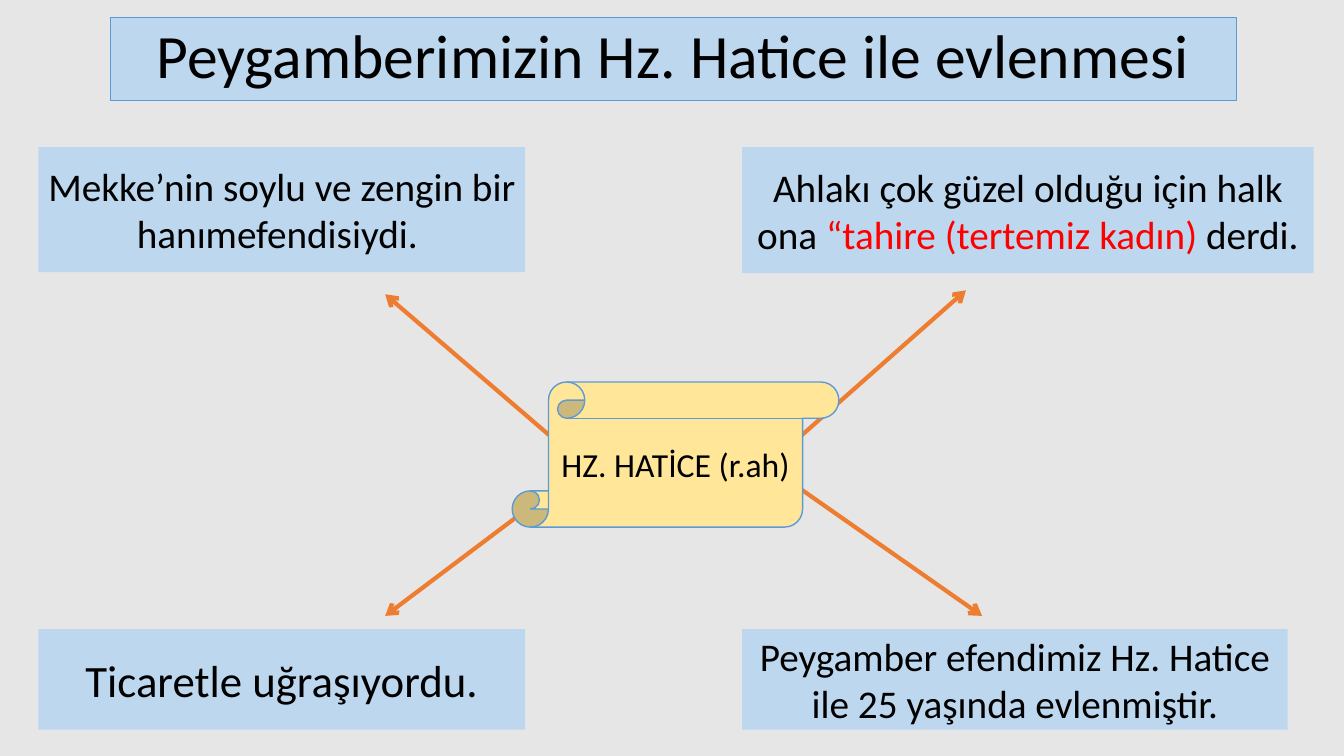
from lxml import etree
from pptx import Presentation
from pptx.dml.color import RGBColor
from pptx.enum.shapes import MSO_CONNECTOR, MSO_SHAPE
from pptx.enum.text import MSO_ANCHOR, PP_ALIGN
from pptx.oxml.ns import qn
from pptx.util import Inches, Pt

RECT, SCROLL = MSO_SHAPE.RECTANGLE, MSO_SHAPE.VERTICAL_SCROLL
LINE = MSO_CONNECTOR.STRAIGHT
MIDDLE, CENTER = MSO_ANCHOR.MIDDLE, PP_ALIGN.CENTER

WIDE, HIGH = Inches(13.33), Inches(7.5)
COLORS = {"back": "E7E6E6", "box": "BDD7EE", "edge": "5B9BD5", "arrow": "ED7D31",
          "scroll": "FFE699", "text": "000000", "accent": "FF0000"}
FRAME = {"word_wrap": True, "vertical_anchor": MIDDLE}

# All places are percent of the slide's width and height
LEFT, RIGHT = 2.85, 55.21
TOP, BOTTOM = 19.47, 83.2
HUB_LEFT, HUB_RIGHT, HUB_Y = 43.51, 57.09, 61.6
LOW_TIP = 81.47

FACTS = [
    ((LEFT, TOP, 36.23, 16.53), 28,
     [("Mekke’nin soylu ve zengin bir hanımefendisiydi. ", "text")]),
    ((RIGHT, TOP, 42.54, 16.67), 28,
     [("Ahlakı çok güzel olduğu için halk ona ", "text"),
      ("“tahire (tertemiz kadın) ", "accent"), ("derdi.", "text")]),
    ((LEFT, BOTTOM, 36.23, 13.33), 32, [("Ticaretle uğraşıyordu.", "text")]),
    ((RIGHT, BOTTOM, 40.59, 13.33), 28,
     [("Peygamber efendimiz Hz. Hatice ile 25 yaşında evlenmiştir.", "text")]),
]
ARROWS = [(HUB_LEFT, 28.66, 38.93), (HUB_LEFT, 28.66, LOW_TIP),
          (HUB_RIGHT, 71.87, 38.4), (HUB_RIGHT, 73.07, LOW_TIP)]


def color(name):
    return RGBColor.from_string(COLORS[name])


def across(share):
    return round(WIDE * share / 100)


def down(share):
    return round(HIGH * share / 100)


def add_box(slide, place, size, runs, kind=RECT, fill="box", edge=0, space=1.0):
    x, y, w, h = place
    box = slide.shapes.add_shape(kind, across(x), down(y), across(w), down(h))
    box.shadow.inherit = False
    box.fill.solid()
    box.fill.fore_color.rgb = color(fill)
    if edge:
        box.line.color.rgb = color("edge")
        box.line.width = Pt(edge)
    else:
        box.line.fill.background()
    for key, value in FRAME.items():
        setattr(box.text_frame, key, value)
    para = box.text_frame.paragraphs[0]
    para.alignment, para.line_spacing = CENTER, space
    for text, tint in runs:
        run = para.add_run()
        run.text = text
        for key, value in {"name": "Calibri", "size": Pt(size)}.items():
            setattr(run.font, key, value)
        run.font.color.rgb = color(tint)
    return box


def add_arrow(slide, start, tip_x, tip_y):
    arrow = slide.shapes.add_connector(
        LINE, across(start), down(HUB_Y), across(tip_x), down(tip_y))
    arrow.line.color.rgb = color("arrow")
    arrow.line.width = Pt(3)
    etree.SubElement(arrow.line._get_or_add_ln(), qn("a:tailEnd"), type="arrow")
    etree.SubElement(arrow._element.spPr, qn("a:effectLst"))


def main():
    deck = Presentation()
    deck.slide_width, deck.slide_height = WIDE, HIGH
    slide = deck.slides.add_slide(deck.slide_layouts[6])
    slide.background.fill.solid()
    slide.background.fill.fore_color.rgb = color("back")

    # Title
    add_box(slide, (8.25, 2.27, 83.72, 11.07), 44,
            [("Peygamberimizin Hz. Hatice ile evlenmesi", "text")],
            edge=0.5, space=0.9)

    # Facts in the four corners
    for place, size, runs in FACTS:
        add_box(slide, place, size, runs)

    # Arrows from the middle, with the scroll on top
    for start, tip_x, tip_y in ARROWS:
        add_arrow(slide, start, tip_x, tip_y)
    scroll = add_box(slide, (38.11, 50.53, 24.31, 19.2), 24,
                     [("HZ. HATİCE (r.ah) ", "text")], SCROLL, "scroll", edge=1)
    scroll.adjustments[0] = 0.25

    deck.save("out.pptx")


if __name__ == "__main__":
    main()
